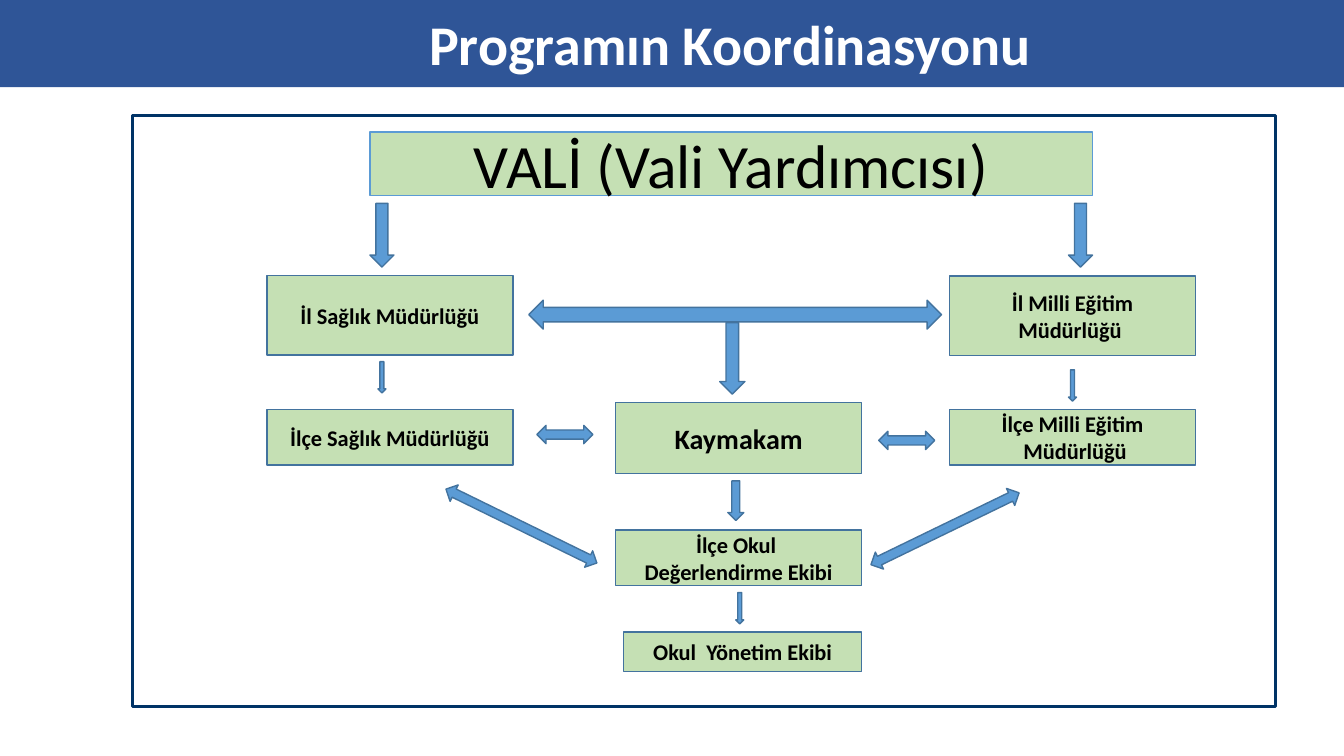
from pptx import Presentation
from pptx.dml.color import RGBColor
from pptx.enum.shapes import MSO_SHAPE as SHAPE
from pptx.enum.text import MSO_ANCHOR as ANCHOR, PP_ALIGN as ALIGN
from pptx.util import Inches, Pt

BAND = RGBColor(0x2F, 0x55, 0x97)
NAVY = RGBColor(0x00, 0x33, 0x66)
GREEN = RGBColor(0xC5, 0xE0, 0xB4)
BLUE = RGBColor(0x5B, 0x9B, 0xD5)
EDGE = RGBColor(0x43, 0x73, 0x9E)
WHITE = RGBColor(0xFF, 0xFF, 0xFF)
BLACK = RGBColor(0, 0, 0)

WIDTH, HEIGHT = Inches(13.33), Inches(7.5)

# Columns and box sizes of the chart, in percent of its frame
LEFT, MIDDLE, RIGHT = 11.8, 42.3, 71.5
BOX_W, TALL, LOW = 21.5, 13.5, 9.4

# Text, left, top, width, height, format
UNITS = [
    ("VALİ (Vali Yardımcısı)", 20.8, 2.7, 63.2, 10.8,
     dict(size=44, bold=False, line=BLUE)),
    ("İl Sağlık Müdürlüğü", LEFT, 27, BOX_W, TALL, {}),
    ("İl Milli Eğitim Müdürlüğü ", RIGHT, 27.1, BOX_W, TALL, {}),
    ("İlçe Sağlık Müdürlüğü", LEFT, 49.7, BOX_W, LOW, {}),
    ("Kaymakam", MIDDLE, 48.5, BOX_W, 12.1, dict(size=20)),
    ("İlçe Milli Eğitim\n Müdürlüğü", RIGHT, 49.7, BOX_W, LOW, {}),
    ("İlçe Okul \nDeğerlendirme Ekibi", MIDDLE, 70.1, BOX_W, LOW, {}),
    ("Okul  Yönetim Ekibi", 43, 87.4, 20.8, 6.7, {}),
]

# Left, top, width, height
DOWN_ARROWS = [
    (20.8, 14.8, 2.1, 10.8), (81.9, 14.8, 2.1, 10.8),
    (51.4, 35, 2.2, 12.1), (52.1, 61.8, 1.4, 6.7),
    (21.5, 41.6, 0.7, 5.3), (81.9, 43, 0.7, 5.3), (52.8, 80.7, 0.7, 5.3),
]

# Left, top, width, height, rotation
DOUBLE_ARROWS = [
    (34.7, 31.2, 36.1, 4.9, 0),
    (35.4, 52.4, 4.9, 3.1, 0), (65.3, 53.4, 4.9, 3.1, 0),
    (26.7, 67.9, 14.7, 3.1, 26.1), (63.9, 68.3, 14.4, 3.2, -25.9),
]


def place(box, left, top, width, height):
    """Turn percentages of a box into a position on the slide."""
    x, y, w, h = box
    return [int(v) for v in (x + w * left / 100, y + h * top / 100,
                             w * width / 100, h * height / 100)]


def write(sp, text, size=16, bold=True, color=BLACK):
    tf = sp.text_frame
    tf.word_wrap = True
    tf.vertical_anchor = ANCHOR.MIDDLE
    tf.margin_top = tf.margin_bottom = 0
    for i, line in enumerate(text.split("\n")):
        p = tf.paragraphs[0] if i == 0 else tf.add_paragraph()
        p.alignment = ALIGN.CENTER
        r = p.add_run()
        r.text = line
        r.font.name, r.font.size, r.font.bold = "Calibri", Pt(size), bold
        r.font.color.rgb = color


def add_shape(slide, kind, at, fill=None, line=None, weight=1):
    sp = slide.shapes.add_shape(kind, *at)
    sp.shadow.inherit = False
    if fill is None:
        sp.fill.background()
    else:
        sp.fill.solid()
        sp.fill.fore_color.rgb = fill
    if line is None:
        sp.line.fill.background()
    else:
        sp.line.color.rgb = line
        sp.line.width = Pt(weight)
    return sp


def add_header(slide, box):
    # The band goes behind the title
    band = add_shape(slide, SHAPE.RECTANGLE, box, BAND)
    slide.shapes._spTree.insert(2, band._element)
    title = slide.shapes.title
    title.left, title.top, title.width, title.height = place(
        box, 9.6, 0, 90.4, 99)
    write(title, "Programın Koordinasyonu ", size=40, color=WHITE)


def add_org_chart(slide, box):
    add_shape(slide, SHAPE.RECTANGLE, box, line=NAVY, weight=2.25)

    # Units
    for text, *at, style in UNITS:
        style = dict(style)
        line = style.pop("line", EDGE)
        sp = add_shape(slide, SHAPE.RECTANGLE, place(box, *at), GREEN, line)
        write(sp, text, **style)

    # Arrows between units
    for at in DOWN_ARROWS:
        add_shape(slide, SHAPE.DOWN_ARROW, place(box, *at), BLUE, EDGE)
    for *at, angle in DOUBLE_ARROWS:
        sp = add_shape(slide, SHAPE.LEFT_RIGHT_ARROW, place(box, *at),
                       BLUE, EDGE)
        sp.rotation = angle


def main():
    prs = Presentation()
    prs.slide_width, prs.slide_height = WIDTH, HEIGHT
    slide = prs.slides.add_slide(prs.slide_layouts[5])
    page = (0, 0, WIDTH, HEIGHT)
    add_header(slide, place(page, 0, 0, 100, 11.55))
    add_org_chart(slide, place(page, 9.83, 15.33, 85.07, 78.13))
    prs.save("out.pptx")


if __name__ == "__main__":
    main()
